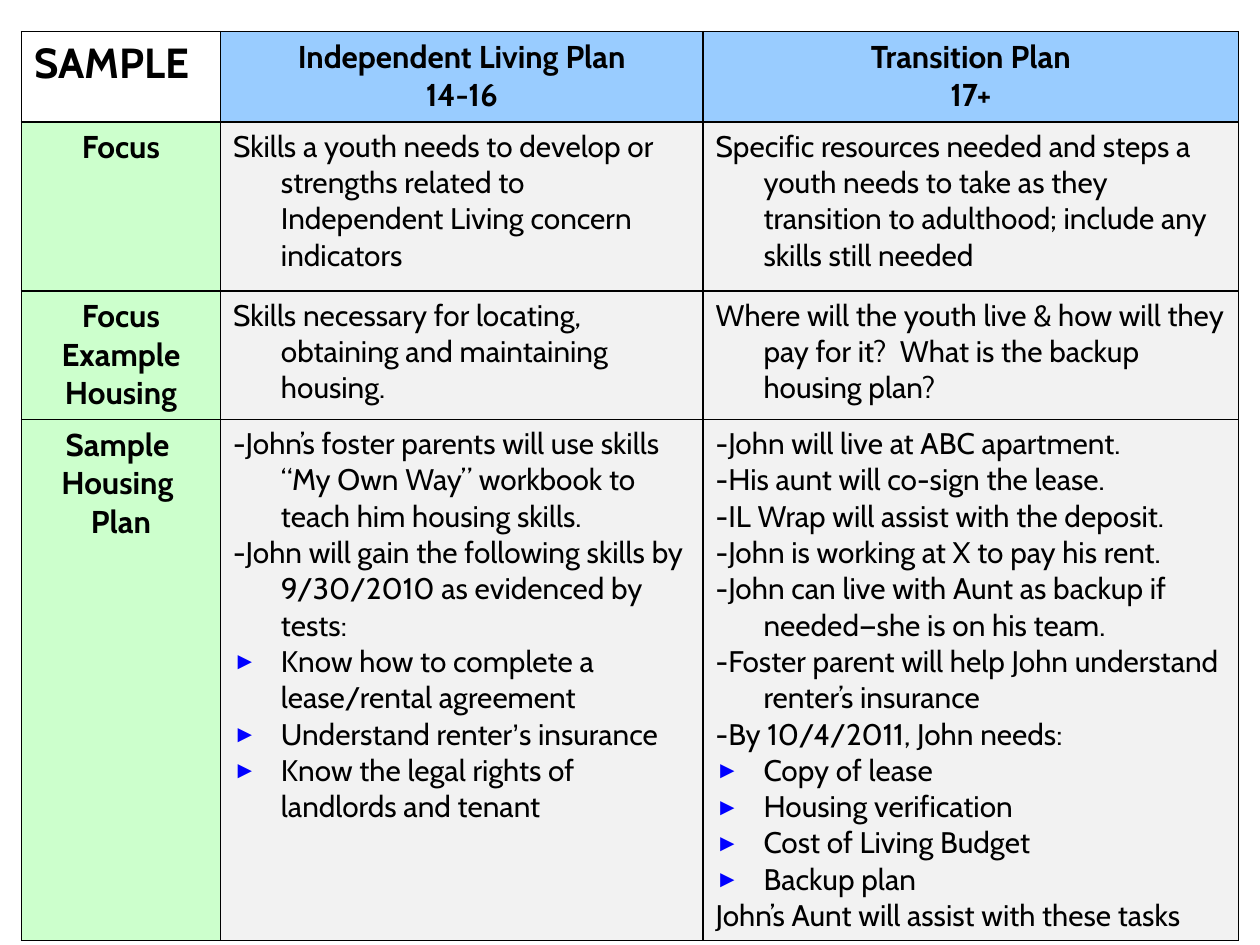
from lxml import etree
from pptx import Presentation
from pptx import util as u
from pptx.dml.color import RGBColor
from pptx.enum import text
from pptx.oxml.ns import qn

COLORS = {"ink": "000000", "header": "99CCFF", "label": "CCFFCC",
          "body": "F2F2F2", "bullet": "0000FF"}
COLUMNS = [1.58, 3.83, 4.25]
ROWS = [0.72, 1.34, 1.02, 4.01]
TAB_STOPS = {1: 0.25, 2: 0.5}
BULLET = "►"

# One list per cell; a paragraph is a string or a list of (text, font) spans.
PLAN = [
    [["SAMPLE"],
     ["Independent Living Plan", "14-16"],
     ["Transition Plan", "17+"]],
    [["Focus"],
     ["Skills a youth needs to develop or strengths related to Independent "
      "Living concern indicators"],
     ["Specific resources needed and steps a youth needs to take as they "
      "transition to adulthood; include any skills still needed"]],
    [["Focus", "Example", "Housing"],
     ["Skills necessary for locating, obtaining and maintaining housing."],
     ["Where will the youth live & how will they pay for it?  What is the "
      "backup housing plan?"]],
    [["Sample ", "Housing ", "Plan"],
     ["-John’s foster parents will use skills “My Own Way” workbook to teach "
      "him housing skills.",
      "-John will gain the following skills by 9/30/2010 as evidenced by tests:",
      BULLET + "Know how to complete a lease/rental agreement",
      [(BULLET + "Understand renter", "Cabin"), ("’", "Arial"),
       ("s insurance", "Cabin")],
      BULLET + "Know the legal rights of landlords and tenant"],
     ["-John will live at ABC apartment.",
      "-His aunt will co-sign the lease.",
      "-IL Wrap will assist with the deposit.",
      "-John is working at X to pay his rent.",
      "-John can live with Aunt as backup if needed—she is on his team.",
      "-Foster parent will help John understand renter’s insurance",
      "-By 10/4/2011, John needs:",
      BULLET + "Copy of lease",
      BULLET + "Housing verification",
      BULLET + "Cost of Living Budget",
      BULLET + "Backup plan",
      "John’s Aunt will assist with these tasks"]],
]


def add_element(parent, tag, **attributes):
    child = etree.SubElement(parent, qn(tag))
    for name, value in attributes.items():
        child.set(name, str(value))
    return child


class PlanSlide:
    font = "Cabin"
    indent = u.Inches(0.38)
    border = u.Pt(1)

    def __init__(self, deck):
        self.page = deck.slides.add_slide(deck.slide_layouts[6])

    def table(self, left, top, columns, rows):
        frame = self.page.shapes.add_table(
            len(rows), len(columns), u.Inches(left), u.Inches(top),
            u.Inches(sum(columns)), u.Inches(sum(rows)))
        table = frame.table
        table.first_row = table.horz_banding = False
        for column, width in zip(table.columns, columns):
            column.width = u.Inches(width)
        for row, height in zip(table.rows, rows):
            row.height = u.Inches(height)
        return table

    def cell(self, cell, paragraphs, fill=None, size=18, bold=True,
             centered=False, hanging=True, tab=None):
        self.borders(cell)
        if fill:
            cell.fill.solid()
            cell.fill.fore_color.rgb = RGBColor.from_string(COLORS[fill])
        else:
            cell.fill.background()
        box = cell.text_frame
        for number, content in enumerate(paragraphs):
            para = box.add_paragraph() if number else box.paragraphs[0]
            spans = [(content, self.font)] if isinstance(content, str) else content
            para.alignment = (text.PP_ALIGN.CENTER if centered
                              else text.PP_ALIGN.LEFT)
            self.paragraph_layout(para, hanging, spans[0][0].startswith(BULLET), tab)
            for words, font in spans:
                self.span(para, words.removeprefix(BULLET), font, size, bold)

    def borders(self, cell):
        properties = cell._tc.get_or_add_tcPr()
        for side in ("a:lnL", "a:lnR", "a:lnT", "a:lnB"):
            line = add_element(properties, side, w=self.border)
            add_element(add_element(line, "a:solidFill"), "a:srgbClr",
                        val=COLORS["ink"])

    def paragraph_layout(self, para, hanging, bulleted, tab):
        """Set the hanging indent, bullet and tab stop."""
        properties = para._p.get_or_add_pPr()
        if hanging:
            properties.set("marL", str(self.indent))
            properties.set("indent", str(-self.indent))
        if bulleted:
            add_element(add_element(properties, "a:buClr"), "a:srgbClr",
                        val=COLORS["bullet"])
            add_element(properties, "a:buSzPct", val=80000)
            add_element(properties, "a:buFont", typeface="Arial")
            add_element(properties, "a:buChar", char=BULLET)
        if tab:
            add_element(add_element(properties, "a:tabLst"), "a:tab",
                        pos=u.Inches(tab), algn="l")

    def span(self, para, words, font, size, bold):
        span = para.add_run()
        span.text = words
        span.font.name = font
        span.font.size = u.Pt(size)
        span.font.bold = bold
        span.font.color.rgb = RGBColor.from_string(COLORS["ink"])


def main():
    deck = Presentation()
    deck.slide_width, deck.slide_height = u.Inches(10), u.Inches(7.5)
    slide = PlanSlide(deck)
    table = slide.table(0.17, 0.25, COLUMNS, ROWS)
    last_row = len(ROWS) - 1
    for row, cells in enumerate(PLAN):
        for column, paragraphs in enumerate(cells):
            cell = table.cell(row, column)
            if row == 0 and column == 0:
                slide.cell(cell, paragraphs, size=24, hanging=False)
            elif row == 0 or column == 0:
                slide.cell(cell, paragraphs, "label" if row else "header",
                           centered=True)
            else:
                slide.cell(cell, paragraphs, "body", size=17, bold=False,
                           tab=TAB_STOPS[column] if row == last_row else None)
    deck.save("out.pptx")


if __name__ == "__main__":
    main()
